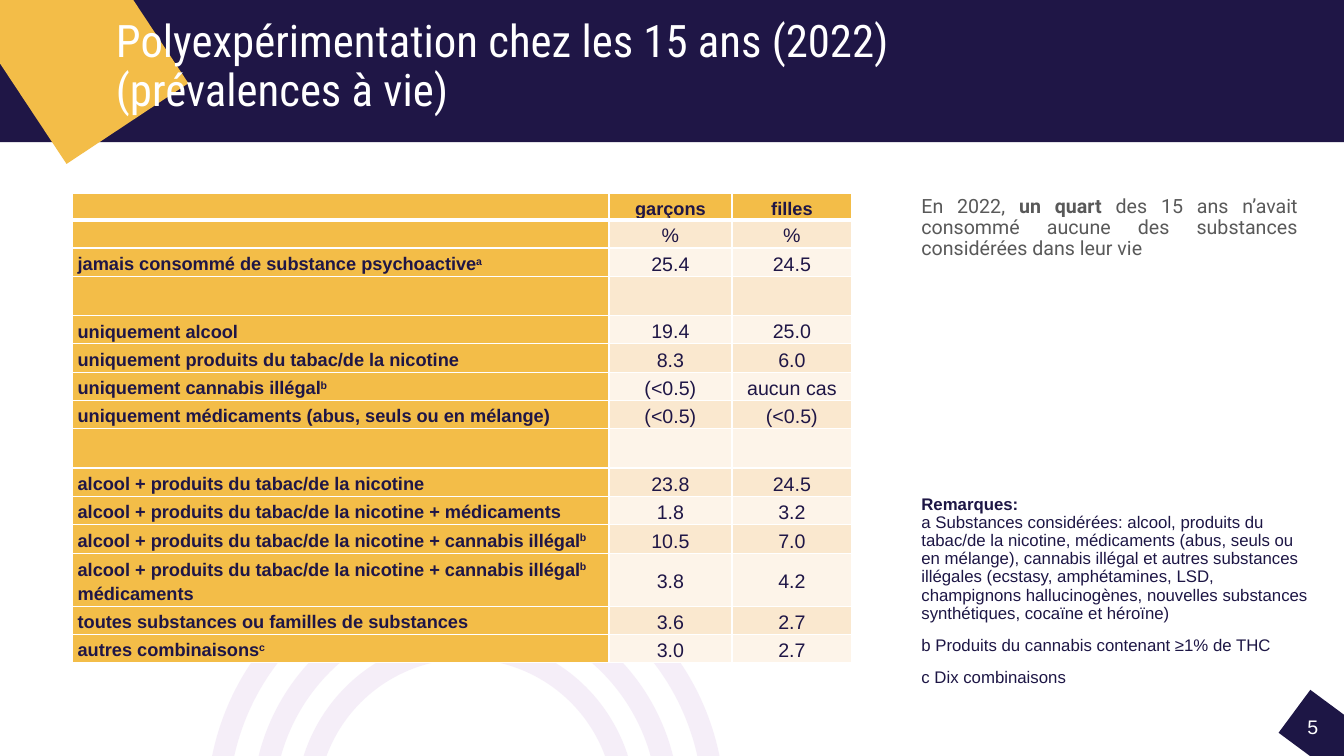
import pptx
import pptx.util
import pptx.dml.color
import pptx.enum.shapes
import pptx.enum.text
import pptx.oxml.ns
import lxml.etree

Inches, Pt = pptx.util.Inches, pptx.util.Pt
SHAPE = pptx.enum.shapes.MSO_SHAPE
ALIGN = pptx.enum.text.PP_ALIGN
ANCHOR = pptx.enum.text.MSO_ANCHOR
qn = pptx.oxml.ns.qn

NAVY, INK, GOLD, WHITE = "1F1646", "1D1645", "F3BD48", "FFFFFF"
GREY, LILAC = "595959", "B980D0"
BANDS = ("FDF4E9", "FAE8CF")

# Text between bars is superscript
ROWS = [
    ("", "garçons", "filles", 0.24),
    ("", "%", "%", 0.26),
    ("jamais consommé de substance psychoactive|a|", "25.4", "24.5", 0.26),
    ("", "", "", 0.39),
    ("uniquement alcool", "19.4", "25.0", 0.26),
    ("uniquement produits du tabac/de la nicotine", "8.3", "6.0", 0.26),
    ("uniquement cannabis illégal|b|", "(<0.5)", "aucun cas", 0.26),
    ("uniquement médicaments (abus, seuls ou en mélange)",
     "(<0.5)", "(<0.5)", 0.28),
    ("", "", "", 0.39),
    ("alcool + produits du tabac/de la nicotine", "23.8", "24.5", 0.26),
    ("alcool + produits du tabac/de la nicotine + médicaments",
     "1.8", "3.2", 0.26),
    ("alcool + produits du tabac/de la nicotine + cannabis illégal|b|",
     "10.5", "7.0", 0.29),
    ("alcool + produits du tabac/de la nicotine + cannabis illégal|b |médicaments",
     "3.8", "4.2", 0.5),
    ("toutes substances ou familles de substances", "3.6", "2.7", 0.26),
    ("autres combinaisons|c|", "3.0", "2.7", 0.26),
]


def rgb(code):
    return pptx.dml.color.RGBColor.from_string(code)


def add_run(para, text, size, color, face="Arial", bold=False):
    run = para.add_run()
    run.text = text
    font = run.font
    font.size, font.name, font.bold = Pt(size), face, bold
    font.color.rgb = rgb(color)
    return run


def add_rect(slide, box, color, turn=0):
    rect = slide.shapes.add_shape(SHAPE.RECTANGLE, *map(Inches, box))
    rect.shadow.inherit = False
    rect.fill.solid()
    rect.fill.fore_color.rgb = rgb(color)
    rect.line.fill.background()
    rect.rotation = turn


def add_ring(slide, mid_x, mid_y, size):
    left, top = mid_x - size / 2, mid_y - size / 2
    ring = slide.shapes.add_shape(SHAPE.OVAL, *map(Inches, (left, top, size, size)))
    ring.shadow.inherit = False
    ring.fill.background()
    ring.line.width = Pt(15.5)
    ring.line.color.rgb = rgb(LILAC)
    tint = ring.line._ln.find(".//" + qn("a:srgbClr"))
    lxml.etree.SubElement(tint, qn("a:alpha")).set("val", "13000")


def add_box(slide, box):
    frame = slide.shapes.add_textbox(*map(Inches, box)).text_frame
    frame.word_wrap = True
    return frame


def set_title(slide, lines):
    title = slide.shapes.title
    title.left, title.top = Inches(1.05), Inches(0.6)
    title.width, title.height = Inches(10.72), Inches(0.6)
    frame = title.text_frame
    frame.word_wrap = True
    frame.auto_size = pptx.enum.text.MSO_AUTO_SIZE.NONE
    frame.vertical_anchor = ANCHOR.BOTTOM
    para = frame.paragraphs[0]
    para.alignment, para.line_spacing = ALIGN.LEFT, 0.9
    for i, line in enumerate(lines):
        if i:
            para.add_line_break()
        add_run(para, line, 32, WHITE, "Roboto Condensed")
    # Bring the title above the banner
    slide.shapes._spTree.append(title._element)


def set_edges(cell, low):
    props = cell._tc.get_or_add_tcPr()
    for i, side in enumerate(("lnL", "lnR", "lnT", "lnB")):
        edge = lxml.etree.Element(qn("a:" + side))
        edge.set("w", str(Pt(low if side == "lnB" else 1)))
        fill = lxml.etree.SubElement(edge, qn("a:solidFill"))
        lxml.etree.SubElement(fill, qn("a:srgbClr")).set("val", WHITE)
        props.insert(i, edge)


def fill_cell(cell, text, size, bold, color, align, low):
    cell.fill.solid()
    cell.fill.fore_color.rgb = rgb(color)
    set_edges(cell, low)
    cell.margin_left = cell.margin_right = Inches(0.05)
    cell.margin_top = cell.margin_bottom = 0
    cell.vertical_anchor = ANCHOR.MIDDLE
    para = cell.text_frame.paragraphs[0]
    para.alignment, para.line_spacing = align, 1.2
    for i, part in enumerate(text.split("|")):
        if part:
            run = add_run(para, part, size, NAVY, bold=bold)
            if i % 2:
                run._r.get_or_add_rPr().set("baseline", "30000")
    if not text:
        # Keeps empty rows from growing
        end = lxml.etree.SubElement(para._p, qn("a:endParaRPr"))
        end.set("sz", "1200")


def add_grid(slide):
    frame = slide.shapes.add_table(
        len(ROWS), 3, Inches(0.72), Inches(1.92), Inches(7.73), Inches(4.43))
    table = frame.table
    table.first_row = table.horz_banding = False
    for col, width in zip(table.columns, (5.32, 1.22, 1.19)):
        col.width = Inches(width)
    for r, (*texts, height) in enumerate(ROWS):
        table.rows[r].height = Inches(height)
        for c, text in enumerate(texts):
            head = r == 0 or c == 0
            fill_cell(table.cell(r, c), text, 13 if head else 14, head,
                      GOLD if head else BANDS[r % 2],
                      ALIGN.CENTER if c else ALIGN.LEFT, 1 if r else 3)


def add_lead(slide):
    para = add_box(slide, (9.04, 1.9, 3.93, 1)).paragraphs[0]
    para.alignment, para.line_spacing = ALIGN.JUSTIFY, Pt(15)
    para.space_after = Pt(6)
    for text, bold in (
            ("En 2022, ", False), ("un quart ", True),
            ("des 15 ans n’avait consommé aucune des substances "
             "considérées dans leur vie", False)):
        add_run(para, text, 14, GREY, "Roboto", bold)


def add_notes(slide):
    frame = add_box(slide, (9.04, 4.87, 4.08, 2.24))
    para = frame.paragraphs[0]
    para.line_spacing = 0.9
    add_run(para, "Remarques:", 12, INK, bold=True)
    para.add_line_break()
    add_run(para, "a Substances considérées: alcool, produits du tabac/de la "
            "nicotine, médicaments (abus, seuls ou en mélange), cannabis "
            "illégal et autres substances illégales (ecstasy, amphétamines, "
            "LSD, champignons hallucinogènes, nouvelles substances "
            "synthétiques, cocaïne et héroïne)", 12, INK)
    for text in ("b Produits du cannabis contenant ≥1% de THC",
                 "c Dix combinaisons"):
        para = frame.add_paragraph()
        para.line_spacing, para.space_before = 0.9, Pt(10)
        add_run(para, text, 12, INK)


def main():
    deck = pptx.Presentation()
    deck.slide_width, deck.slide_height = Inches(13.33), Inches(7.5)
    slide = deck.slides.add_slide(deck.slide_layouts[5])

    # Background rings
    for size in (3.16, 4.02, 4.92):
        add_ring(slide, 4.62, 8.01, size)

    # Page number
    add_rect(slide, (12.76, 7.03, 0.8, 0.53), INK, 36.5)
    para = add_box(slide, (12.81, 7.04, 0.42, 0.57)).paragraphs[0]
    para.alignment = ALIGN.CENTER
    add_run(para, "5", 14, WHITE)

    # Banner and title
    add_rect(slide, (0, 0, 13.33, 1.41), NAVY)
    add_rect(slide, (-0.45, -0.42, 2.21, 1.45), GOLD, 56.5)
    set_title(slide, ("Polyexpérimentation chez les 15 ans (2022)",
                      "(prévalences à vie)"))

    # Content
    add_notes(slide)
    add_grid(slide)
    add_lead(slide)
    deck.save("out.pptx")


if __name__ == "__main__":
    main()
